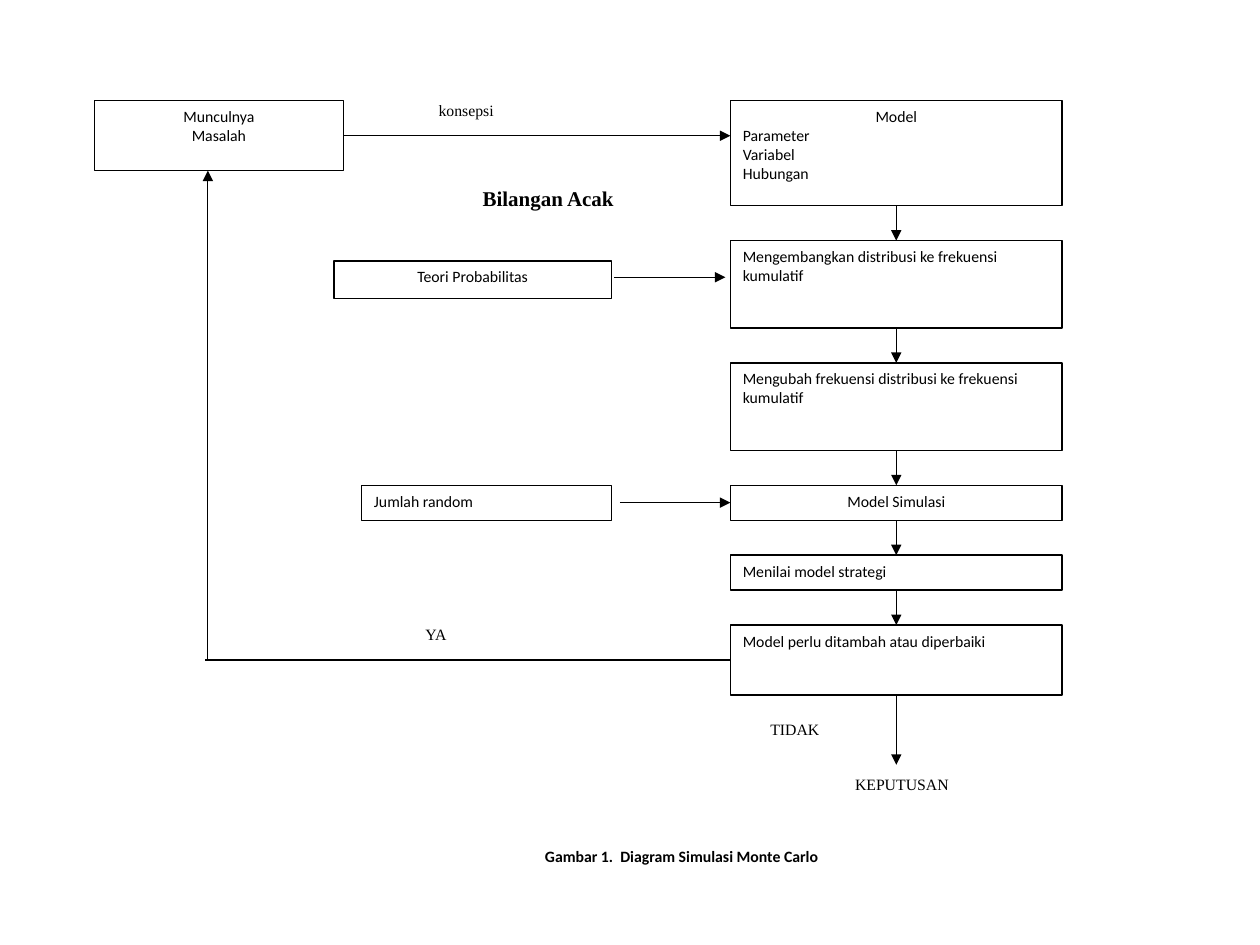
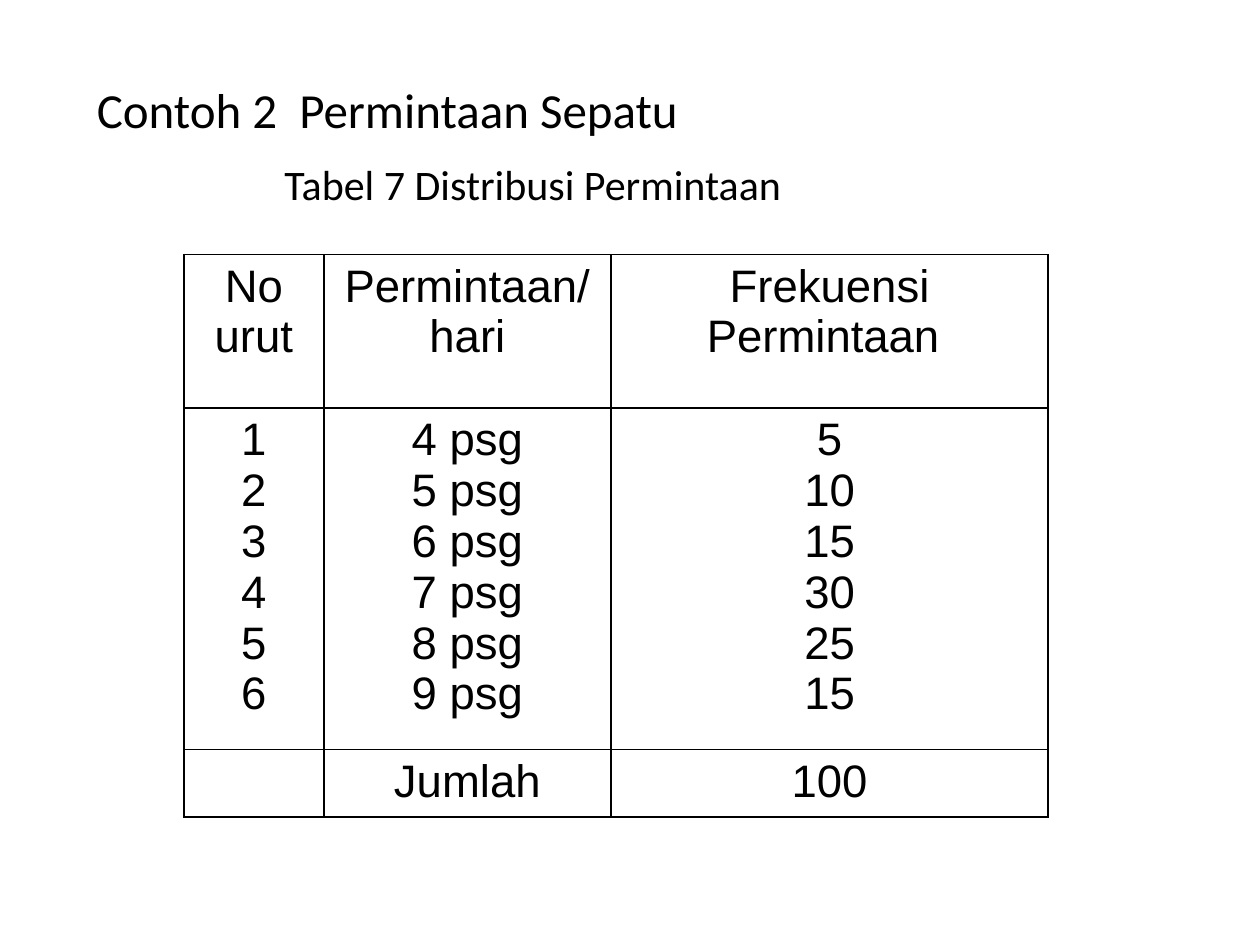
from lxml.etree import SubElement
from pptx import Presentation
from pptx.dml.color import RGBColor
from pptx.enum.shapes import MSO_CONNECTOR as Connector, MSO_SHAPE as Shape
from pptx.enum.text import MSO_ANCHOR as Anchor, PP_ALIGN as Align
from pptx.oxml import parse_xml
from pptx.oxml.ns import nsdecls, qn
from pptx.util import Inches, Pt

INK, PAPER = "000000", "FFFFFF"
SANS, SERIF, TABLE_FONT = "Calibri", "Times New Roman", "Arial"
TOP, LEFT, BOTTOM, RIGHT = range(4)
ALIGNS = {"l": Align.LEFT, "c": Align.CENTER}


def paint(color_format, hex_color):
    color_format.rgb = RGBColor.from_string(hex_color)


def fill(target, hex_color):
    target.fill.solid()
    paint(target.fill.fore_color, hex_color)


def apply(target, values):
    for name, value in values.items():
        setattr(target, name, value)


class Deck:
    """Holds the style, the current slide and that slide's grid."""

    def __init__(self, width, height):
        self.prs = Presentation()
        self.prs.slide_width, self.prs.slide_height = Inches(width), Inches(height)

    def new_slide(self, left, top, column, row):
        """Start a slide whose grid begins at left, top (inches)."""
        self.left, self.top, self.column, self.row = left, top, column, row
        slide = self.prs.slides.add_slide(self.prs.slide_layouts[6])
        fill(slide.background, PAPER)
        self.shapes = slide.shapes

    def point(self, column, row):
        return (Inches(self.left + column * self.column),
                Inches(self.top + row * self.row))

    def area(self, column, row, columns, rows):
        return (*self.point(column, row),
                Inches(columns * self.column), Inches(rows * self.row))

    def set_lines(self, frame, lines, aligns="l", size=9, font=SANS, bold=False):
        """One paragraph a line; the last letter of aligns serves the rest."""
        for index, line in enumerate(lines):
            paragraph = frame.paragraphs[0] if index == 0 else frame.add_paragraph()
            paragraph.alignment = ALIGNS[aligns[min(index, len(aligns) - 1)]]
            run = paragraph.add_run()
            run.text = line
            apply(run.font, {"size": Pt(size), "name": font, "bold": bold})
            paint(run.font.color, INK)

    def box(self, area, lines, aligns="l"):
        box = self.shapes.add_shape(Shape.RECTANGLE, *self.area(*area))
        box.shadow.inherit = False
        fill(box, PAPER)
        paint(box.line.color, INK)
        box.line.width = Pt(0.75)
        apply(box.text_frame, {"word_wrap": True, "vertical_anchor": Anchor.TOP})
        self.set_lines(box.text_frame, lines, aligns)
        return box

    def label(self, area, text, aligns="l", frame_format=None, **style):
        label = self.shapes.add_textbox(*self.area(*area))
        apply(label.text_frame, {"word_wrap": True, **(frame_format or {})})
        self.set_lines(label.text_frame, [text], aligns, **style)

    def line(self, start, end, begin=None, finish=None, arrow=True):
        """Straight line; begin and finish are (box, side) joints."""
        line = self.shapes.add_connector(
            Connector.STRAIGHT, *self.point(*start), *self.point(*end))
        if begin:
            line.begin_connect(*begin)
        if finish:
            line.end_connect(*finish)
        paint(line.line.color, INK)
        line.line.width = Pt(0.75)
        properties = line._element.spPr
        if arrow:
            SubElement(properties.get_or_add_ln(), qn("a:tailEnd"), type="triangle")
        SubElement(properties, qn("a:effectLst"))

    def table(self, area, widths, heights, rows, size):
        table = self.shapes.add_table(len(rows), len(widths), *self.area(*area)).table
        apply(table, {"first_row": False, "horz_banding": False})
        for column, width in zip(table.columns, widths):
            column.width = Inches(width * self.column)
        for row, height, texts in zip(table.rows, heights, rows):
            row.height = Inches(height * self.row)
            for cell, lines in zip(row.cells, texts):
                fill(cell, PAPER)
                self.border(cell)
                self.set_lines(cell.text_frame, lines, "c", size, TABLE_FONT)

    def border(self, cell):
        properties = cell._tc.get_or_add_tcPr()
        for index, side in enumerate("LRTB"):
            properties.insert(index, parse_xml(
                f'<a:ln{side} {nsdecls("a")} w="{Pt(1)}"><a:solidFill>'
                f'<a:srgbClr val="{INK}"/></a:solidFill></a:ln{side}>'))


def monte_carlo_diagram(deck):
    deck.new_slide(0.75, 0.8, column=7.68 / 35, row=5.27 / 19)
    stage_left, stage_width, middle = 23, 12, 29
    stages = [
        (0, 3, ["Model", "Parameter", "Variabel", "Hubungan"], "cl"),
        (4, 2.5, ["Mengembangkan distribusi ke frekuensi kumulatif"], "l"),
        (7.5, 2.5, ["Mengubah frekuensi distribusi ke frekuensi kumulatif"], "l"),
        (11, 1, ["Model Simulasi"], "c"),
        (13, 1, ["Menilai model strategi"], "l"),
        (15, 2, ["Model perlu ditambah atau diperbaiki"], "l"),
    ]
    problem = deck.box((0, 0, 9, 2), ["Munculnya", "Masalah"], "c")
    deck.box((8.66, 4.58, 10.03, 1.08), ["Teori Probabilitas"], "c")
    deck.box((9.66, 11, 9.03, 1), ["Jumlah random"])
    boxes = [deck.box((stage_left, top, stage_width, height), lines, aligns)
             for top, height, lines, aligns in stages]
    for upper, lower, (top, height, *_), (next_top, *_) in zip(
            boxes, boxes[1:], stages, stages[1:]):
        deck.line((middle, top + height), (middle, next_top),
                  (upper, BOTTOM), (lower, TOP))

    simulation, review = boxes[3], boxes[5]
    feedback = 4.1
    deck.line((9, 1), (stage_left, 1), begin=(problem, RIGHT))
    deck.line((18.8, 5.05), (22.82, 5.05))
    deck.line((19, 11.5), (stage_left, 11.5), finish=(simulation, LEFT))
    deck.line((middle, 17), (middle, 19), begin=(review, BOTTOM))
    deck.line((feedback, 16), (feedback, 2))
    deck.line((4, 16), (stage_left, 16), finish=(review, LEFT), arrow=False)

    for area, text, aligns in [
            ((12, -0.18, 6, 1), "konsepsi", "l"),
            ((24.7, 19.1, 9, 1), "KEPUTUSAN", "c"),
            ((22.33, 17.52, 6, 1), "TIDAK", "c"),
            ((10.35, 14.82, 4, 1), "YA", "c")]:
        deck.label(area, text, aligns, font=SERIF)
    deck.label((6.38, 21.16, 29.7, 1.5), "Gambar 1.  Diagram Simulasi Monte Carlo",
               "c", bold=True)
    deck.label((13.4, 2.24, 6, 1.08), "Bilangan Acak", size=12, font=SERIF, bold=True,
               frame_format={"word_wrap": False, "vertical_anchor": Anchor.MIDDLE,
                             "margin_left": Inches(0.14), "margin_right": 0})


def shoe_demand(deck):
    deck.new_slide(0, 0, column=0.1, row=0.1)
    deck.label((6.7, 5.8, 65.4, 5.7), "Contoh 2  Permintaan Sepatu", size=28)
    deck.label((21.6, 12.1, 50.4, 5.1), "Tabel 7 Distribusi Permintaan", size=24)
    demand = {4: 5, 5: 10, 6: 15, 7: 30, 8: 25, 9: 15}
    rows = [
        [["No urut"], ["Permintaan/hari"], ["Frekuensi Permintaan "]],
        [[str(number + 1) for number in range(len(demand))],
         [f"{pairs} psg" for pairs in demand],
         [str(frequency) for frequency in demand.values()]],
        [[], ["Jumlah"], [str(sum(demand.values()))]],
    ]
    deck.table((14.6, 20.2, 68.6, 44.6), (11.1, 22.8, 34.7), (12.2, 27.1, 5.3),
               rows, size=26)


def main():
    deck = Deck(10, 7.5)
    monte_carlo_diagram(deck)
    shoe_demand(deck)
    deck.prs.save("out.pptx")


if __name__ == "__main__":
    main()
